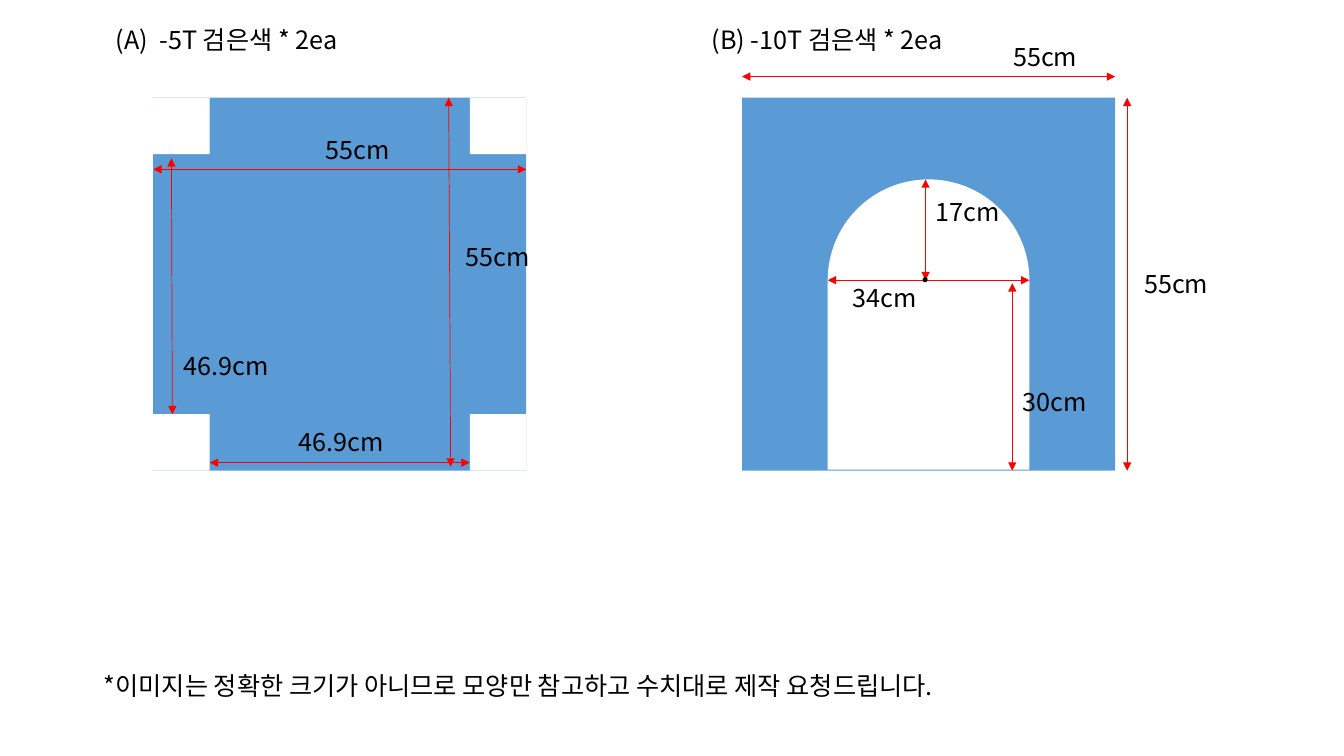
from dataclasses import dataclass
from itertools import product

import pptx
import pptx.dml.color
import pptx.enum.shapes
import pptx.oxml
import pptx.oxml.ns
import pptx.util
from pptx.util import Inches

FONT = "Noto Sans CJK KR"
BLUE, WHITE, RED, BLACK = "5B9BD5", "FFFFFF", "FF0000", "000000"
RECTANGLE = pptx.enum.shapes.MSO_SHAPE.RECTANGLE
OVAL = pptx.enum.shapes.MSO_SHAPE.OVAL

PANEL_SIZE = 3.7
PANEL_TOP = 0.97
PANEL_A_LEFT = 1.52
PANEL_B_LEFT = 7.36
NOTCH = 0.56
ARCH_LEFT, ARCH_TOP, ARCH_WIDTH = 8.21, 1.78, 2.0
ARCH_CENTRE_Y = ARCH_TOP + ARCH_WIDTH / 2
DOT_SIZE = 0.05


@dataclass
class Piece:
    kind: int
    left: float
    top: float
    width: float
    height: float
    fill: str


@dataclass
class Label:
    text: str
    left: float
    top: float
    width: float = 1.69


@dataclass
class Dimension:
    x1: float
    y1: float
    x2: float
    y2: float


def color(value: str) -> pptx.dml.color.RGBColor:
    return pptx.dml.color.RGBColor.from_string(value)


def draw_piece(shapes, piece: Piece) -> None:
    shape = shapes.add_shape(piece.kind, Inches(piece.left), Inches(piece.top),
                             Inches(piece.width), Inches(piece.height))
    shape.shadow.inherit = False
    shape.fill.solid()
    shape.fill.fore_color.rgb = color(piece.fill)
    shape.line.fill.background()


def draw_label(shapes, label: Label) -> None:
    box = shapes.add_textbox(Inches(label.left), Inches(label.top),
                             Inches(label.width), Inches(0.4))
    box.text_frame.word_wrap = True
    box.text_frame.text = label.text
    for span in box.text_frame.paragraphs[0].runs:
        span.font.size = pptx.util.Pt(18)
        span.font.name = FONT
        span.font.color.rgb = color(BLACK)
        east_asian = pptx.oxml.parse_xml(
            f'<a:ea {pptx.oxml.ns.nsdecls("a")} typeface="{FONT}"/>')
        span.font._element.append(east_asian)


def draw_dimension(shapes, dimension: Dimension) -> None:
    arrow = shapes.add_connector(
        pptx.enum.shapes.MSO_CONNECTOR.STRAIGHT,
        Inches(dimension.x1), Inches(dimension.y1),
        Inches(dimension.x2), Inches(dimension.y2))
    arrow.line.color.rgb = color(RED)
    arrow.line.width = pptx.util.Pt(0.5)
    namespace = pptx.oxml.ns.nsdecls("a")
    line = arrow.line._get_or_add_ln()
    for end in ("headEnd", "tailEnd"):
        line.append(pptx.oxml.parse_xml(f'<a:{end} {namespace} type="triangle"/>'))
    arrow._element.spPr.append(pptx.oxml.parse_xml(f"<a:effectLst {namespace}/>"))


def main() -> None:
    deck = pptx.Presentation()
    deck.slide_width = Inches(13.33)
    deck.slide_height = Inches(7.5)
    page = deck.slides.add_slide(deck.slide_layouts[6])

    right_a = PANEL_A_LEFT + PANEL_SIZE
    right_b = PANEL_B_LEFT + PANEL_SIZE
    bottom = PANEL_TOP + PANEL_SIZE
    arch_right = ARCH_LEFT + ARCH_WIDTH

    for left in (PANEL_A_LEFT, PANEL_B_LEFT):
        draw_piece(page.shapes, Piece(RECTANGLE, left, PANEL_TOP,
                                      PANEL_SIZE, PANEL_SIZE, BLUE))
    for left, top in product((PANEL_A_LEFT, right_a - NOTCH),
                             (PANEL_TOP, bottom - NOTCH)):
        draw_piece(page.shapes, Piece(RECTANGLE, left, top, NOTCH, NOTCH, WHITE))

    arch = page.shapes.add_group_shape()
    draw_piece(arch.shapes, Piece(OVAL, ARCH_LEFT, ARCH_TOP,
                                  ARCH_WIDTH, ARCH_WIDTH, WHITE))
    draw_piece(arch.shapes, Piece(RECTANGLE, ARCH_LEFT, 2.81,
                                  ARCH_WIDTH, 1.85, WHITE))

    dimensions = [
        Dimension(PANEL_A_LEFT, 1.68, right_a, 1.68),
        Dimension(4.45, PANEL_TOP, 4.47, 4.63),
        Dimension(1.7, 1.57, 1.71, 4.11),
        Dimension(PANEL_A_LEFT + NOTCH, 4.59, right_a - NOTCH, 4.59),
        Dimension(PANEL_B_LEFT, 0.76, right_b, 0.76),
        Dimension(11.18, PANEL_TOP, 11.18, bottom),
        Dimension(ARCH_LEFT, ARCH_CENTRE_Y, arch_right, ARCH_CENTRE_Y),
        Dimension(9.18, ARCH_TOP, 9.18, ARCH_CENTRE_Y),
        Dimension(10.04, 2.81, 10.04, bottom),
    ]
    for dimension in dimensions:
        draw_dimension(page.shapes, dimension)
    draw_piece(page.shapes, Piece(OVAL, 9.15, 2.75, DOT_SIZE, DOT_SIZE, BLACK))

    labels = [
        Label("(A)  -5T 검은색 * 2ea", 1.05, 0.19, 3.13),
        Label("55cm", 3.13, 1.28),
        Label("55cm", 4.52, 2.34),
        Label("46.9cm", 1.72, 3.43),
        Label("46.9cm", 2.86, 4.18),
        Label("(B) -10T 검은색 * 2ea", 6.96, 0.19, 3.34),
        Label("55cm", 9.95, 0.36),
        Label("55cm", 11.25, 2.61),
        Label("17cm", 9.18, 1.9),
        Label("34cm", 8.36, 2.75),
        Label("30cm", 10.04, 3.78),
        Label("*이미지는 정확한 크기가 아니므로 모양만 참고하고 수치대로 제작 요청드립니다.",
              0.93, 6.6, 10.7),
    ]
    for label in labels:
        draw_label(page.shapes, label)

    deck.save("out.pptx")


if __name__ == "__main__":
    main()
